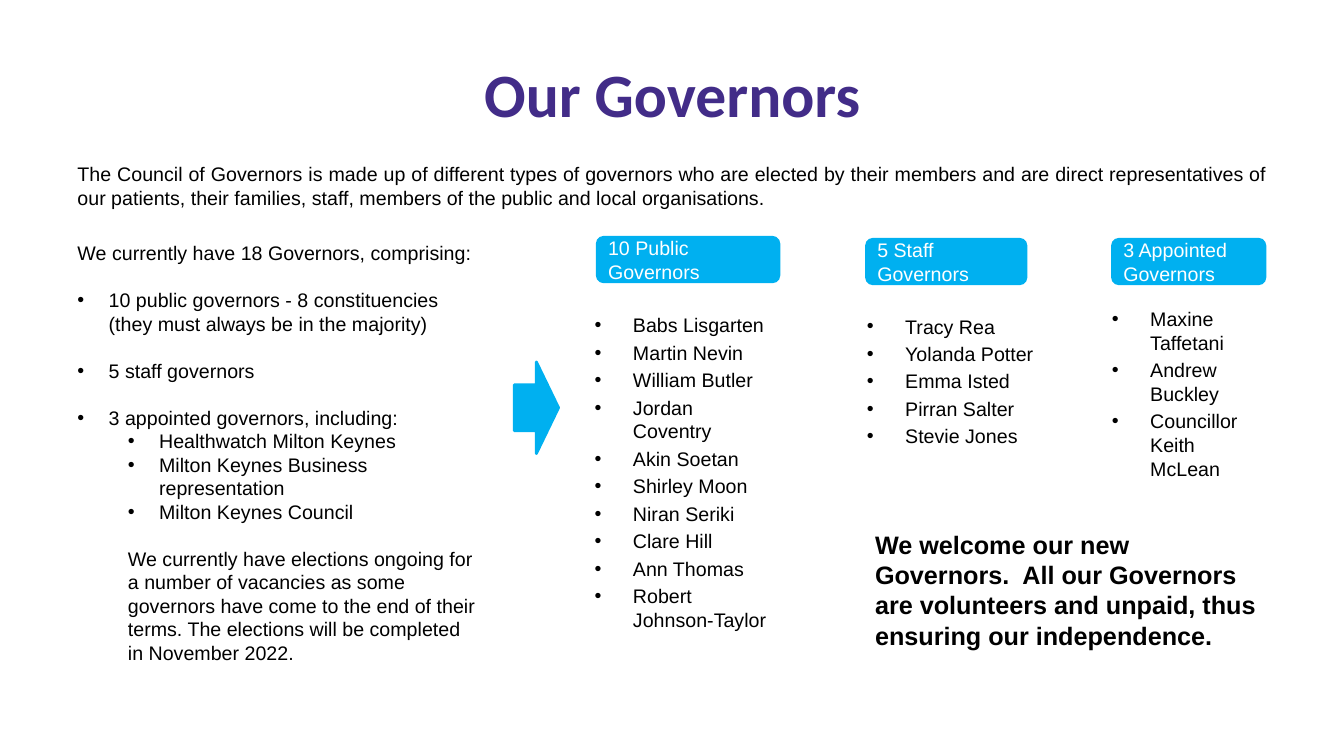
from lxml.etree import SubElement
from pptx import Presentation
from pptx.dml.color import RGBColor
from pptx.enum.shapes import MSO_SHAPE
from pptx.enum.text import MSO_ANCHOR, PP_ALIGN
from pptx.oxml.ns import qn
from pptx.util import Inches, Pt

PURPLE = RGBColor(0x42, 0x2C, 0x88)
BLUE = RGBColor(0x00, 0xB0, 0xF0)
BLACK = RGBColor(0x00, 0x00, 0x00)
WHITE = RGBColor(0xFF, 0xFF, 0xFF)

BLANK_LINE = 16.8
NAME_GAP = 2.8

COMPOSITION = [
    ("We currently have 18 Governors, comprising:", 0, False, 0),
    ("10 public governors - 8 constituencies (they must always be in the majority)",
     0.31, True, BLANK_LINE),
    ("5 staff governors", 0.31, True, BLANK_LINE),
    ("3 appointed governors, including:", 0.31, True, BLANK_LINE),
    ("Healthwatch Milton Keynes", 0.81, True, 0),
    ("Milton Keynes Business representation", 0.81, True, 0),
    ("Milton Keynes Council", 0.81, True, 0),
    ("We currently have elections ongoing for a number of vacancies as some "
     "governors have come to the end of their terms. The elections will be "
     "completed in November 2022.", 0.5, False, BLANK_LINE),
]

GROUPS = [
    ("10 Public Governors", (5.91, 2.34, 1.83, 0.47), (5.8, 3.06, 1.94, 3.37),
     ["Babs Lisgarten", "Martin Nevin", "William Butler", "Jordan Coventry",
      "Akin Soetan", "Shirley Moon", "Niran Seriki", "Clare Hill", "Ann Thomas",
      "Robert Johnson-Taylor"]),
    ("5 Staff Governors", (8.58, 2.36, 1.61, 0.47), (8.5, 3.07, 2.14, 1.59),
     ["Tracy Rea", "Yolanda Potter", "Emma Isted", "Pirran Salter", "Stevie Jones"]),
    ("3 Appointed Governors", (11.02, 2.36, 1.54, 0.47), (10.93, 3, 1.66, 1.88),
     ["Maxine Taffetani", "Andrew Buckley", "Councillor Keith McLean"]),
]


def add_span(para, text, size=14, color=BLACK, bold=False, font="Arial"):
    """Add one formatted run to a paragraph."""
    span = para.add_run()
    span.text = text
    span.font.name = font
    span.font.size = Pt(size)
    span.font.bold = bold
    span.font.color.rgb = color


def add_box(page, place, anchor=MSO_ANCHOR.TOP):
    """Add a wrapping text box and return its text frame."""
    frame = page.shapes.add_textbox(*map(Inches, place)).text_frame
    frame.word_wrap = True
    frame.vertical_anchor = anchor
    return frame


def add_text(page, place, text, align=PP_ALIGN.LEFT, anchor=MSO_ANCHOR.TOP, **style):
    """Add a text box holding a single paragraph."""
    para = add_box(page, place, anchor).paragraphs[0]
    para.alignment = align
    add_span(para, text, **style)


def indent_para(para, margin, hanging):
    """Indent a paragraph, with a hanging bullet where a width is given."""
    properties = para._p.get_or_add_pPr()
    properties.set("marL", str(Inches(margin)))
    properties.set("indent", str(-Inches(hanging)))
    if hanging:
        SubElement(properties, qn("a:buFont"), typeface="Arial")
        SubElement(properties, qn("a:buChar"), char="•")


def add_list(page, place, items, hanging, align=PP_ALIGN.LEFT):
    """Add a text box of (text, margin, bulleted, space before) paragraphs."""
    frame = add_box(page, place)
    for index, (text, margin, bulleted, gap) in enumerate(items):
        para = frame.add_paragraph() if index else frame.paragraphs[0]
        indent_para(para, margin, hanging if bulleted else 0)
        para.alignment = align
        para.space_before = Pt(gap if index else 0)
        add_span(para, text)


def add_blue_shape(page, kind, place):
    """Add a flat blue preset shape without an outline."""
    shape = page.shapes.add_shape(kind, *map(Inches, place))
    shape.shadow.inherit = False
    shape.fill.solid()
    shape.fill.fore_color.rgb = BLUE
    shape.line.fill.background()
    return shape


def add_group(page, heading, heading_place, names_place, names):
    """Add a heading label and the list of governors below it."""
    label = add_blue_shape(page, MSO_SHAPE.FLOWCHART_ALTERNATE_PROCESS, heading_place)
    frame = label.text_frame
    frame.word_wrap = True
    frame.vertical_anchor = MSO_ANCHOR.MIDDLE
    para = frame.paragraphs[0]
    para.alignment = PP_ALIGN.LEFT
    add_span(para, heading, color=WHITE)
    items = [(name, 0.38, True, NAME_GAP) for name in names]
    add_list(page, names_place, items, 0.38, PP_ALIGN.JUSTIFY)


def add_arrow(page, place):
    """Add the outlined block arrow leading to the groups."""
    arrow = add_blue_shape(page, MSO_SHAPE.RIGHT_ARROW, place)
    arrow.line.color.rgb = BLUE
    arrow.line.width = Pt(2)


def main():
    """Build the governors slide and save the deck."""
    deck = Presentation()
    deck.slide_width = Inches(13.33)
    deck.slide_height = Inches(7.5)
    page = deck.slides.add_slide(deck.slide_layouts[6])
    add_text(page, (0.67, 0.3, 12, 1.25), "Our Governors", PP_ALIGN.CENTER,
             MSO_ANCHOR.MIDDLE, size=44, color=PURPLE, bold=True, font="Calibri")
    add_text(page, (0.67, 1.56, 12, 0.74),
             "The Council of Governors is made up of different types of governors "
             "who are elected by their members and are direct representatives of "
             "our patients, their families, staff, members of the public and local "
             "organisations.", PP_ALIGN.JUSTIFY)
    add_list(page, (0.67, 2.34, 4.18, 4.58), COMPOSITION, 0.31)
    for group in GROUPS:
        add_group(page, *group)
    add_arrow(page, (5.1, 3.59, 0.44, 0.91))
    add_text(page, (8.58, 5.2, 4.08, 1.31),
             "We welcome our new Governors.  All our Governors are volunteers and "
             "unpaid, thus ensuring our independence.", size=18, bold=True)
    deck.save("out.pptx")


if __name__ == "__main__":
    main()
